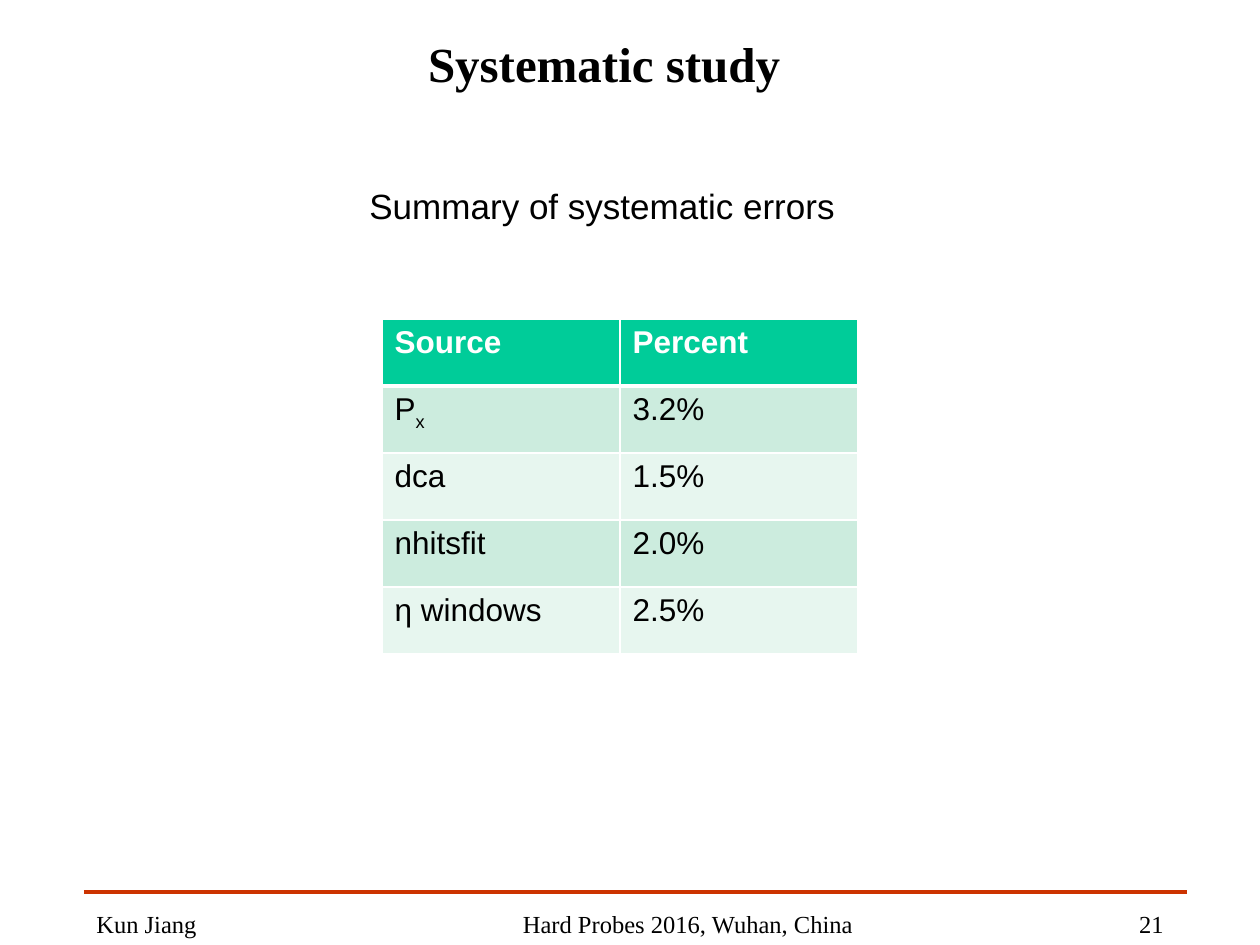
from lxml import etree
from pptx import Presentation
from pptx.dml.color import RGBColor
from pptx.enum.shapes import MSO_CONNECTOR
from pptx.enum.text import MSO_ANCHOR, MSO_AUTO_SIZE, PP_ALIGN
from pptx.oxml.ns import qn
from pptx.util import Pt

LEFT, MID, RIGHT = PP_ALIGN.LEFT, PP_ALIGN.CENTER, PP_ALIGN.RIGHT
STRAIGHT = MSO_CONNECTOR.STRAIGHT

# Content: a cell is a list of (text, baseline) runs or a plain string
TITLE = "Systematic study"
LEAD = "Summary of systematic errors"
ROWS = [
    ("Source", "Percent"),
    ([("P", 0), ("x", -25000)], "3.2%"),
    ("dca", "1.5%"),
    ("nhitsfit", "2.0%"),
    ("η windows", "2.5%"),
]
FOOT = [  # text, left, width, align
    ("Kun Jiang", 84, 265, LEFT),
    ("Hard Probes 2016, Wuhan, China", 378, 620, MID),
    ("21", 1029, 147, RIGHT),
]

THEME = {
    "serif": "Times New Roman", "sans": "Arial",
    "ink": "000000", "paper": "FFFFFF", "rule": "CC3300",
    "head": "00CC99", "bands": ("CCECDE", "E7F6EF"),
    "title": 28, "lead": 20, "cell": 18, "foot": 14,
}


def px(n):
    return round(n * 914400 / 126)


def rgb(name):
    return RGBColor.from_string(THEME.get(name, name))


def write(frame, text, size, face="sans", color="ink", bold=False, align=LEFT):
    para = frame.paragraphs[0]
    para.alignment = align
    runs = [(text, 0)] if isinstance(text, str) else text
    for part, base in runs:
        run = para.add_run()
        run.text = part
        font = run.font
        font.name, font.size, font.bold = THEME[face], Pt(THEME[size]), bold
        font.color.rgb = rgb(color)
        if base:
            run._r.get_or_add_rPr().set("baseline", str(base))


def edge(cell, **widths):
    props = cell._tc.get_or_add_tcPr()
    for side in "LRTB":
        line = etree.SubElement(props, qn(f"a:ln{side}"),
                                w=str(Pt(widths.get(side, 1))))
        fill = etree.SubElement(line, qn("a:solidFill"))
        etree.SubElement(fill, qn("a:srgbClr"), val=THEME["paper"])


def box(slide, *at):
    return slide.shapes.add_textbox(*map(px, at)).text_frame


def main():
    deck = Presentation()
    deck.slide_width, deck.slide_height = px(1260), px(945)
    slide = deck.slides.add_slide(deck.slide_layouts[5])

    # Title
    title = slide.shapes.title
    title.left, title.top, title.width, title.height = map(px, (105, 10, 998, 105))
    title.text_frame.vertical_anchor = MSO_ANCHOR.MIDDLE
    write(title.text_frame, TITLE, "title", "serif", bold=True, align=MID)

    # Lead line
    lead = box(slide, 357, 178, 494, 55)
    lead.word_wrap = False
    lead.auto_size = MSO_AUTO_SIZE.SHAPE_TO_FIT_TEXT
    write(lead, LEAD, "lead")

    # Table of errors
    wide, high = 238, 67
    count = len(ROWS)
    table = slide.shapes.add_table(count, 2, px(382), px(319),
                                   px(wide * 2), px(high * count)).table
    for col in table.columns:
        col.width = px(wide)
    for r, row in enumerate(ROWS):
        table.rows[r].height = px(high)
        top = r == 0
        for c, text in enumerate(row):
            cell = table.cell(r, c)
            edge(cell, T=3 if r == 1 else 1, B=3 if top else 1)
            cell.fill.solid()
            cell.fill.fore_color.rgb = rgb("head" if top else THEME["bands"][(r - 1) % 2])
            write(cell.text_frame, text, "cell", bold=top,
                  color="paper" if top else "ink")

    # Footer rule and texts
    rule = slide.shapes.add_connector(STRAIGHT, px(84), px(892), px(1187), px(892))
    rule.line.color.rgb = rgb("rule")
    rule.line.width = Pt(2.5)
    etree.SubElement(rule._element.spPr, qn("a:effectLst"))
    for text, left, width, align in FOOT:
        foot = box(slide, left, 903, width, 42)
        foot.word_wrap = True
        write(foot, text, "foot", "serif", align=align)

    deck.save("out.pptx")


if __name__ == "__main__":
    main()
